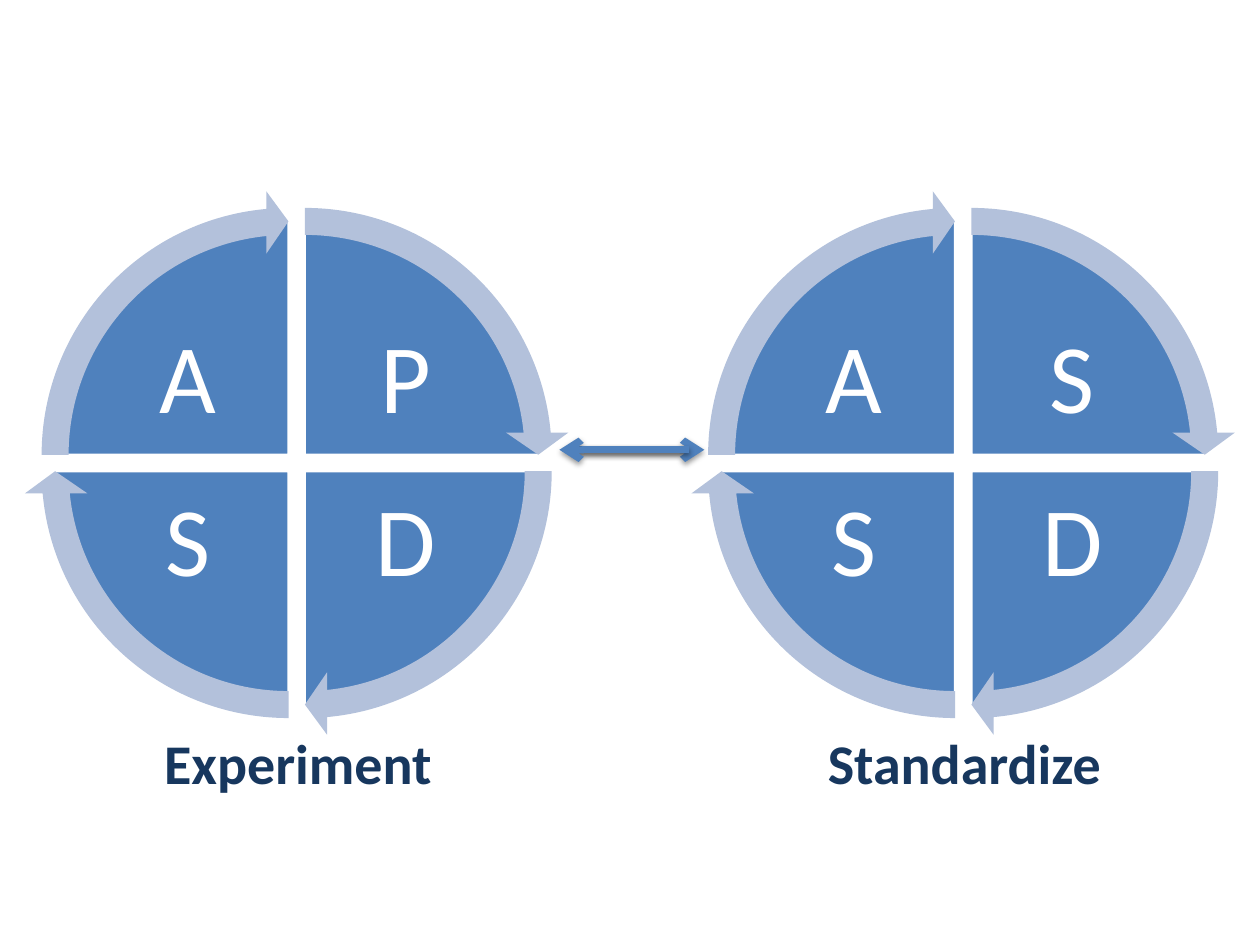
from lxml.etree import SubElement
from pptx import Presentation
from pptx.dml.color import RGBColor
from pptx.enum.shapes import MSO_CONNECTOR, MSO_SHAPE
from pptx.enum.text import MSO_ANCHOR, MSO_AUTO_SIZE, PP_ALIGN
from pptx.oxml.ns import qn
from pptx.util import Inches, Pt

BLUE, PALE, NAVY, WHITE = "4F81BD", "B3C1DB", "17375E", "FFFFFF"
FONT = "Calibri"

# Wheel geometry, inches
PIE, RING = 3.73, 4.2             # diameters
PIE_GAP, RING_GAP = 0.06, 0.065   # shift of each quarter from the centre
LETTER_DX, LETTER_DY = 0.865, 0.645
CENTRE_Y = 3.675

# Angles in adjustment units: a quarter turn is 54, a full turn 216
QUARTER, TURN = 54, 216
HEAD = 3.275                      # angle taken by an arrowhead

# Quarters clockwise from top right: x side, y side, start angle
QUADRANTS = [(1, -1, 162), (1, 1, 0), (-1, 1, 54), (-1, -1, 108)]


def rgb(value):
    return RGBColor.from_string(value)


def centred(cx, cy, w, h):
    return [Inches(v) for v in (cx - w / 2, cy - h / 2, w, h)]


def add_text(shapes, text, box, size, color, bold=False):
    s = shapes.add_textbox(*box)
    tf = s.text_frame
    tf.word_wrap = True
    tf.text = text
    p = tf.paragraphs[0]
    p.alignment = PP_ALIGN.CENTER
    font = p.runs[0].font
    font.name, font.size, font.bold = FONT, Pt(size), bold
    font.color.rgb = rgb(color)
    return tf


def add_arc(shapes, kind, box, adjustments, fill, outline=None):
    s = shapes.add_shape(kind, *box)
    s.shadow.inherit = False
    for i, value in enumerate(adjustments):
        s.adjustments[i] = value
    s.fill.solid()
    s.fill.fore_color.rgb = rgb(fill)
    if outline:
        s.line.color.rgb = rgb(outline)
        s.line.width = Pt(2)
    else:
        s.line.fill.background()


def add_letter(shapes, letter, cx, cy):
    tf = add_text(shapes, letter, centred(cx, cy, 1.38, 1.02), 56, WHITE)
    tf.vertical_anchor = MSO_ANCHOR.MIDDLE
    tf.margin_left = tf.margin_right = Inches(0.08)
    tf.margin_top = tf.margin_bottom = Inches(0.08)
    tf.paragraphs[0].line_spacing = 0.9


def add_wheel(slide, cx, letters):
    shapes = slide.shapes.add_group_shape().shapes
    # Quarter pies with their letters
    for letter, (sx, sy, start) in zip(letters, QUADRANTS):
        box = centred(cx + sx * PIE_GAP, CENTRE_Y + sy * PIE_GAP, PIE, PIE)
        add_arc(shapes, MSO_SHAPE.PIE, box,
                (start, (start + QUARTER) % TURN), BLUE, WHITE)
        add_letter(shapes, letter, cx + sx * LETTER_DX, CENTRE_Y + sy * LETTER_DY)
    # Arrows around the rim
    for sx, sy, start in QUADRANTS:
        box = centred(cx + sx * RING_GAP, CENTRE_Y + sy * RING_GAP, RING, RING)
        add_arc(shapes, MSO_SHAPE.CIRCULAR_ARROW, box,
                (0.051, HEAD, start + QUARTER - HEAD, start, 0.059), PALE)


def add_arrow(slide, x1, x2, y):
    s = slide.shapes.add_connector(
        MSO_CONNECTOR.STRAIGHT, Inches(x1), Inches(y), Inches(x2), Inches(y))
    s.line.color.rgb = rgb(BLUE)
    s.line.width = Pt(4)
    SubElement(s.line._get_or_add_ln(), qn("a:tailEnd"), type="arrow")
    # Soft shadow straight below
    effects = SubElement(s._element.spPr, qn("a:effectLst"))
    shadow = SubElement(effects, qn("a:outerShdw"), blurRad=str(Pt(3.1)),
                        dist=str(Pt(1.6)), dir="5400000", rotWithShape="0")
    color = SubElement(shadow, qn("a:srgbClr"), val="000000")
    SubElement(color, qn("a:alpha"), val="38000")


def main():
    prs = Presentation()
    prs.slide_width, prs.slide_height = Inches(10), Inches(7.5)
    slide = prs.slides.add_slide(prs.slide_layouts[6])

    # Two-way link between the wheels
    add_arrow(slide, 4.55, 5.59, 3.57)
    add_arrow(slide, 5.47, 4.44, 3.57)

    # Wheels, placed evenly about the middle of the slide
    wheels = [(5 - 2.645, "PDSA", "Experiment"), (5 + 2.645, "SDSA", "Standardize")]
    for cx, letters, _ in wheels:
        add_wheel(slide, cx, letters)

    # Captions
    for cx, _, caption in wheels:
        tf = add_text(slide.shapes, caption, centred(cx + 0.01, 6.05, 4.39, 0.64),
                      32, NAVY, bold=True)
        tf.auto_size = MSO_AUTO_SIZE.SHAPE_TO_FIT_TEXT

    prs.save("out.pptx")


if __name__ == "__main__":
    main()
